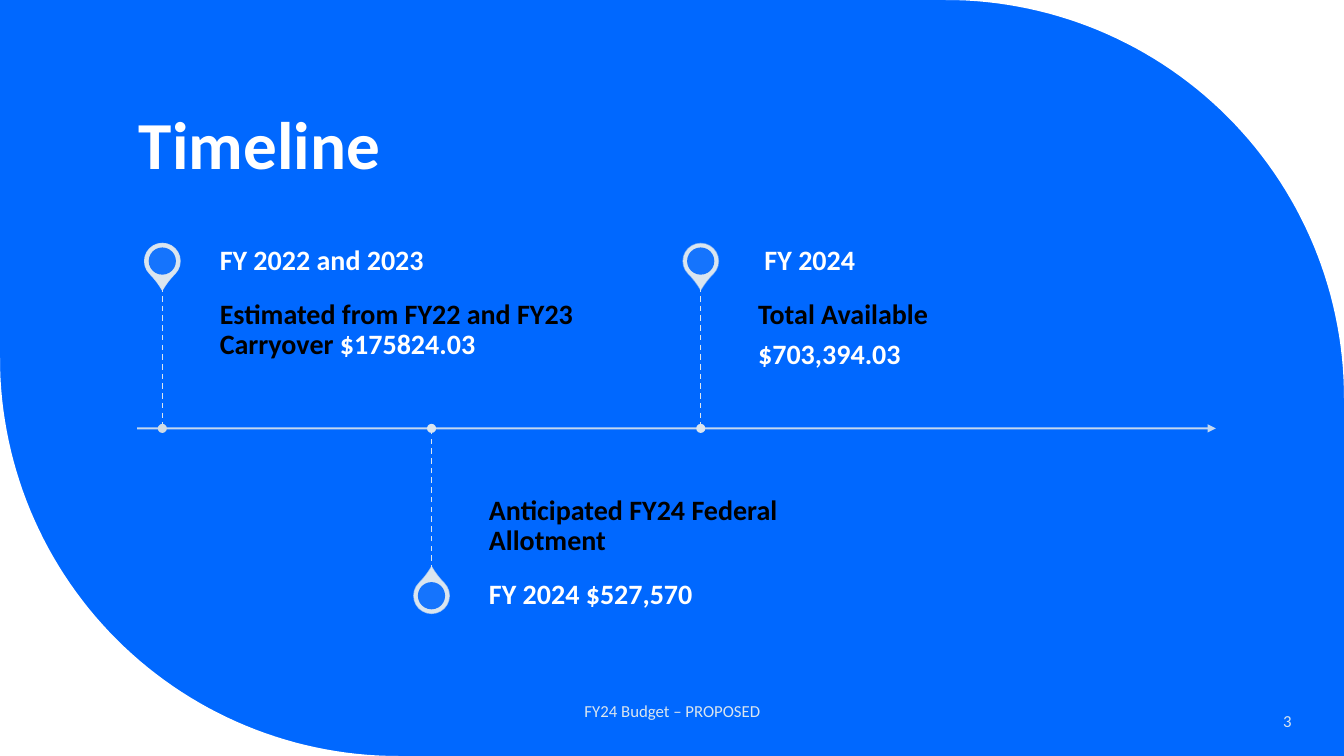
import math

from lxml import etree
from pptx import Presentation
from pptx import util as u
from pptx.dml.color import RGBColor
from pptx.enum import dml, shapes, text
from pptx.oxml.ns import qn

BLUE, WHITE, BLACK, PALE = "0068FF", "FFFFFF", "000000", "DAE5EF"
WIDTH, HEIGHT = 13.33, 7.5
AXIS_Y = 4.25


def paint(target, colour, opacity=100):
    """Give a fill or a line fill a solid colour."""
    target.solid()
    target.fore_color.rgb = RGBColor.from_string(colour)
    if opacity < 100:
        for node in target._xPr.iter(qn("a:srgbClr")):
            etree.SubElement(node, qn("a:alpha"), val=str(opacity * 1000))


def add_text(page, box, paragraphs, size=20, bold=True, spacing=0.9, after=7,
             align=text.PP_ALIGN.LEFT, anchor=text.MSO_ANCHOR.MIDDLE,
             insets=(0.1, 0.05, 0.1, 0.05)):
    """Each paragraph is a list of (words, colour) spans."""
    frame = page.shapes.add_textbox(*map(u.Inches, box)).text_frame
    frame.word_wrap = True
    frame.vertical_anchor = anchor
    (frame.margin_left, frame.margin_top,
     frame.margin_right, frame.margin_bottom) = map(u.Inches, insets)
    for index, spans in enumerate(paragraphs):
        para = frame.add_paragraph() if index else frame.paragraphs[0]
        para.alignment = align
        para.line_spacing = spacing
        para.space_after = u.Pt(after)
        for words, colour in spans:
            span = para.add_run()
            span.text = words
            span.font.name = "Calibri"
            span.font.size = u.Pt(size)
            span.font.bold = bold
            span.font.color.rgb = RGBColor.from_string(colour)


def add_shape(page, kind, centre, size, colour, opacity=100):
    x, y = centre
    box = (x - size / 2, y - size / 2, size, size)
    shape = page.shapes.add_shape(kind, *map(u.Inches, box))
    shape.shadow.inherit = False
    paint(shape.fill, colour, opacity)
    shape.line.fill.background()
    return shape


def add_line(page, start, end, weight, opacity=100):
    line = page.shapes.add_connector(
        shapes.MSO_CONNECTOR.STRAIGHT, *map(u.Inches, (*start, *end)))
    paint(line.line.fill, PALE, opacity)
    line.line.width = u.Pt(weight)
    etree.SubElement(line._element.spPr, qn("a:effectLst"))
    return line


def add_corner(page, box, start_angle):
    """White corner outside a quarter circle; angles run clockwise from east."""
    left, top, size = box
    at_top_right = start_angle == 270
    centre = (left, top + size) if at_top_right else (left + size, top)
    corner = (left + size, top) if at_top_right else (left, top + size)
    angles = [math.radians(start_angle + 1.5 * step) for step in range(61)]
    arc = [(centre[0] + size * math.cos(angle), centre[1] + size * math.sin(angle))
           for angle in angles]
    points = [tuple(map(u.Inches, point)) for point in [corner, *arc]]
    builder = page.shapes.build_freeform(*points[0])
    builder.add_line_segments(points[1:], close=True)
    shape = builder.convert_to_shape()
    shape.shadow.inherit = False
    paint(shape.fill, WHITE)
    shape.line.fill.background()


def add_axis(page, left, right):
    axis = add_line(page, (left, AXIS_Y), (right, AXIS_Y), 1.5, 90)
    etree.SubElement(axis.line._get_or_add_ln(), qn("a:tailEnd"), type="triangle")


def add_milestone(page, x, above, heading, body, opacity, dot=PALE):
    """Pin, dashed stem and texts on one side of the axis."""
    body_height, heading_height, text_width = 1.41, 0.5, 3.8
    side = -1 if above else 1
    stem_end = AXIS_Y + side * body_height
    pin = (x, stem_end + side * heading_height / 2)

    # Pin
    drop = add_shape(page, shapes.MSO_SHAPE.TEAR, pin, 0.35, PALE)
    drop.adjustments[0] = 1.15
    drop.rotation = 135 if above else 315
    paint(drop.line.fill, PALE, opacity)
    drop.line.width = u.Pt(1)
    add_shape(page, shapes.MSO_SHAPE.OVAL, pin, 0.27, BLUE, 90)

    # Texts
    text_left = x + 0.57
    add_text(page, (text_left, min(AXIS_Y, stem_end), text_width, body_height), body,
             anchor=text.MSO_ANCHOR.TOP if above else text.MSO_ANCHOR.BOTTOM,
             insets=(0, 0.14, 0.14, 0.21) if above else (0, 0.21, 0, 0.14))
    add_text(page, (text_left, pin[1] - heading_height / 2, text_width, heading_height),
             [[(heading, WHITE)]], insets=(0, 0, 0.14, 0))

    # Stem and dot on the axis
    stem = add_line(page, (x, stem_end), (x, AXIS_Y), 1)
    stem.line.dash_style = dml.MSO_LINE.DASH
    add_shape(page, shapes.MSO_SHAPE.OVAL, (x, AXIS_Y), 0.09, dot)


def add_footer(page, box, words, align):
    add_text(page, box, [[(words, PALE)]], size=12, bold=False, spacing=1,
             after=0, align=align)


def build_timeline(page):
    # Background and corners
    paint(page.background.fill, BLUE)
    radius = 3.95
    add_corner(page, (WIDTH - radius, 0, radius), 270)
    add_corner(page, (0, HEIGHT - radius, radius), 90)

    # Title
    add_text(page, (1.28, 0.42, 10.69, 1.45), [[("Timeline", WHITE)]], size=48,
             after=0, anchor=text.MSO_ANCHOR.BOTTOM)

    # Timeline
    add_axis(page, 1.36, 12.06)
    milestones = [
        dict(above=True, heading="FY 2022 and 2023", opacity=90, dot="D0DBE4",
             body=[[("Estimated from FY22 and FY23 Carryover ", BLACK),
                    ("$175824.03", WHITE)]]),
        dict(above=False, heading="FY 2024 $527,570", opacity=70,
             body=[[("Anticipated FY24 Federal Allotment", BLACK)]]),
        dict(above=True, heading=" FY 2024", opacity=50,
             body=[[("Total Available", BLACK)], [("$703,394.03", WHITE)]]),
    ]
    for index, milestone in enumerate(milestones):
        add_milestone(page, 1.61 + 2.67 * index, **milestone)

    # Footer and page number
    add_footer(page, (4.42, 6.85, 4.5, 0.4), "FY24 Budget – PROPOSED",
               text.PP_ALIGN.CENTER)
    add_footer(page, (11.1, 6.95, 1.81, 0.4), "3", text.PP_ALIGN.RIGHT)


def main():
    deck = Presentation()
    deck.slide_width = u.Inches(WIDTH)
    deck.slide_height = u.Inches(HEIGHT)
    build_timeline(deck.slides.add_slide(deck.slide_layouts[6]))
    deck.save("out.pptx")


if __name__ == "__main__":
    main()
